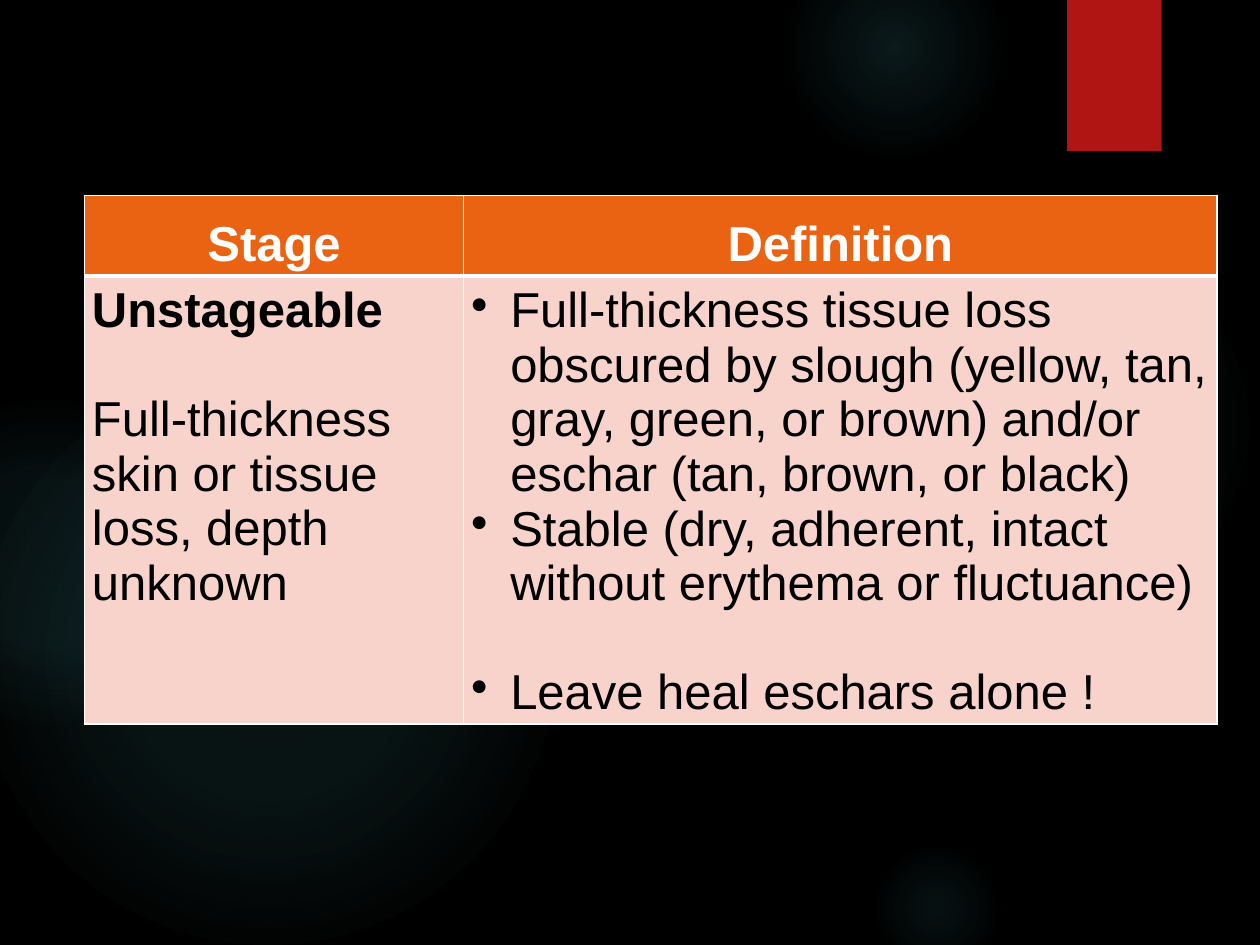
from dataclasses import dataclass

from pptx import Presentation
from pptx import util as u
from pptx.dml.color import RGBColor
from pptx.enum import shapes, text
from pptx.oxml import ns, parse_xml


@dataclass(frozen=True)
class Theme:
    """Colours, font and type sizes of the slide."""
    background: str = "000000"
    glow: str = "50B9C1"
    ribbon: str = "B01513"
    header: str = "EA6312"
    body: str = "F7D3CC"
    light: str = "FFFFFF"
    dark: str = "000000"
    font: str = "Arial"
    size: int = 28
    gap: int = 31


THEME = Theme()
GLOWS = [
    (6.89, 1.83, 3.08, ((0, 7), (36, 6), (69, 0))),
    (6.22, -0.5, 1.75, ((0, 14), (36, 7), (73, 0))),
    (6.89, 6.67, 1.08, ((0, 9), (36, 5), (66, 0))),
    (-0.17, 2.92, 4.58, ((0, 11), (36, 10), (75, 0))),
    (-0.92, 3.17, 2.58, ((0, 8), (36, 8), (72, 0))),
]
HEADINGS = ["Stage", "Definition"]
STAGE = [
    ("Unstageable", True, 0),
    ("Full-thickness skin or tissue loss, depth unknown", False, THEME.gap),
]
DEFINITION = [
    ("Full-thickness tissue loss obscured by slough (yellow, tan, gray, green, "
     "or brown) and/or eschar (tan, brown, or black)", False, 0),
    ("Stable (dry, adherent, intact without erythema or fluctuance)", False, 0),
    ("Leave heal eschars alone !", False, THEME.gap),
]


def rgb(value):
    """Return a colour from its hexadecimal value."""
    return RGBColor.from_string(value)


def add_plain_shape(slide, kind, left, top, width, height):
    """Add a preset shape without line or shadow."""
    shape = slide.shapes.add_shape(
        kind, u.Inches(left), u.Inches(top), u.Inches(width), u.Inches(height))
    shape.shadow.inherit = False
    shape.line.fill.background()
    return shape


def add_glow(slide, left, top, diameter, stops):
    """Add a circle that fades out from its centre."""
    shape = add_plain_shape(
        slide, shapes.MSO_SHAPE.OVAL, left, top, diameter, diameter)
    shape.fill.gradient()
    stop_xml = "".join(
        f'<a:gs pos="{position * 1000}"><a:srgbClr val="{THEME.glow}">'
        f'<a:alpha val="{alpha * 1000}"/></a:srgbClr></a:gs>'
        for position, alpha in stops)
    radial = parse_xml(
        f'<a:gradFill {ns.nsdecls("a")}><a:gsLst>{stop_xml}</a:gsLst>'
        '<a:path path="circle"><a:fillToRect l="50000" t="50000" r="50000" '
        'b="50000"/></a:path></a:gradFill>')
    properties = shape._element.spPr
    properties.replace(properties.find(ns.qn("a:gradFill")), radial)


def add_ribbon(slide):
    """Add the red ribbon at the top edge."""
    ribbon = add_plain_shape(
        slide, shapes.MSO_SHAPE.RECTANGLE, 8.47, 0, 0.75, 1.2)
    ribbon.fill.solid()
    ribbon.fill.fore_color.rgb = rgb(THEME.ribbon)


def style_cell(cell, fill, anchor, top_width, bottom_width):
    """Set margins, borders and fill of a cell."""
    cell.margin_left = cell.margin_right = cell.margin_top = u.Inches(0.06)
    cell.margin_bottom = u.Inches(0.03)
    cell.vertical_anchor = anchor
    properties = cell._tc.get_or_add_tcPr()
    borders = {"L": 1, "R": 1, "T": top_width, "B": bottom_width}
    for side, width in borders.items():
        properties.append(parse_xml(
            f'<a:ln{side} {ns.nsdecls("a")} w="{u.Pt(width)}"><a:solidFill>'
            f'<a:srgbClr val="{THEME.light}"/></a:solidFill></a:ln{side}>'))
    cell.fill.solid()
    cell.fill.fore_color.rgb = rgb(fill)


def add_run(paragraph, wording, color, bold):
    """Add one formatted run."""
    run = paragraph.add_run()
    run.text = wording
    run.font.name = THEME.font
    run.font.size = u.Pt(THEME.size)
    run.font.bold = bold
    run.font.color.rgb = rgb(color)


def add_bullet(paragraph):
    """Give a paragraph a bullet and a hanging indent."""
    properties = paragraph._p.get_or_add_pPr()
    properties.set("marL", str(u.Inches(0.31)))
    properties.set("indent", str(-u.Inches(0.31)))
    properties.append(parse_xml(f'<a:buChar {ns.nsdecls("a")} char="•"/>'))


def fill_header(cell, heading):
    """Write a heading cell."""
    style_cell(cell, THEME.header, text.MSO_ANCHOR.BOTTOM, 1, 3)
    paragraph = cell.text_frame.paragraphs[0]
    paragraph.alignment = text.PP_ALIGN.CENTER
    add_run(paragraph, heading, THEME.light, True)


def fill_body(cell, entries, bulleted):
    """Write a body cell, one paragraph per entry."""
    style_cell(cell, THEME.body, text.MSO_ANCHOR.TOP, 3, 1)
    frame = cell.text_frame
    for index, (wording, bold, gap) in enumerate(entries):
        paragraph = frame.add_paragraph() if index else frame.paragraphs[0]
        paragraph.alignment = text.PP_ALIGN.LEFT
        paragraph.space_before = u.Pt(gap)
        if bulleted:
            add_bullet(paragraph)
        add_run(paragraph, wording, THEME.dark, bold)


def add_stage_table(slide):
    """Add the table of stage and definition."""
    widths, heights = (3.01, 5.98), (0.64, 3.38)
    table = slide.shapes.add_table(
        2, 2, u.Inches(0.67), u.Inches(1.55),
        u.Inches(sum(widths)), u.Inches(sum(heights))).table
    for column, width in zip(table.columns, widths):
        column.width = u.Inches(width)
    for row, height in zip(table.rows, heights):
        row.height = u.Inches(height)
    for index, heading in enumerate(HEADINGS):
        fill_header(table.cell(0, index), heading)
    fill_body(table.cell(1, 0), STAGE, bulleted=False)
    fill_body(table.cell(1, 1), DEFINITION, bulleted=True)


def main():
    """Build and save the slide."""
    presentation = Presentation()
    presentation.slide_width = u.Inches(10)
    presentation.slide_height = u.Inches(7.5)
    slide = presentation.slides.add_slide(presentation.slide_layouts[6])
    slide.background.fill.solid()
    slide.background.fill.fore_color.rgb = rgb(THEME.background)
    for glow in GLOWS:
        add_glow(slide, *glow)
    add_ribbon(slide)
    add_stage_table(slide)
    presentation.save("out.pptx")


if __name__ == "__main__":
    main()
